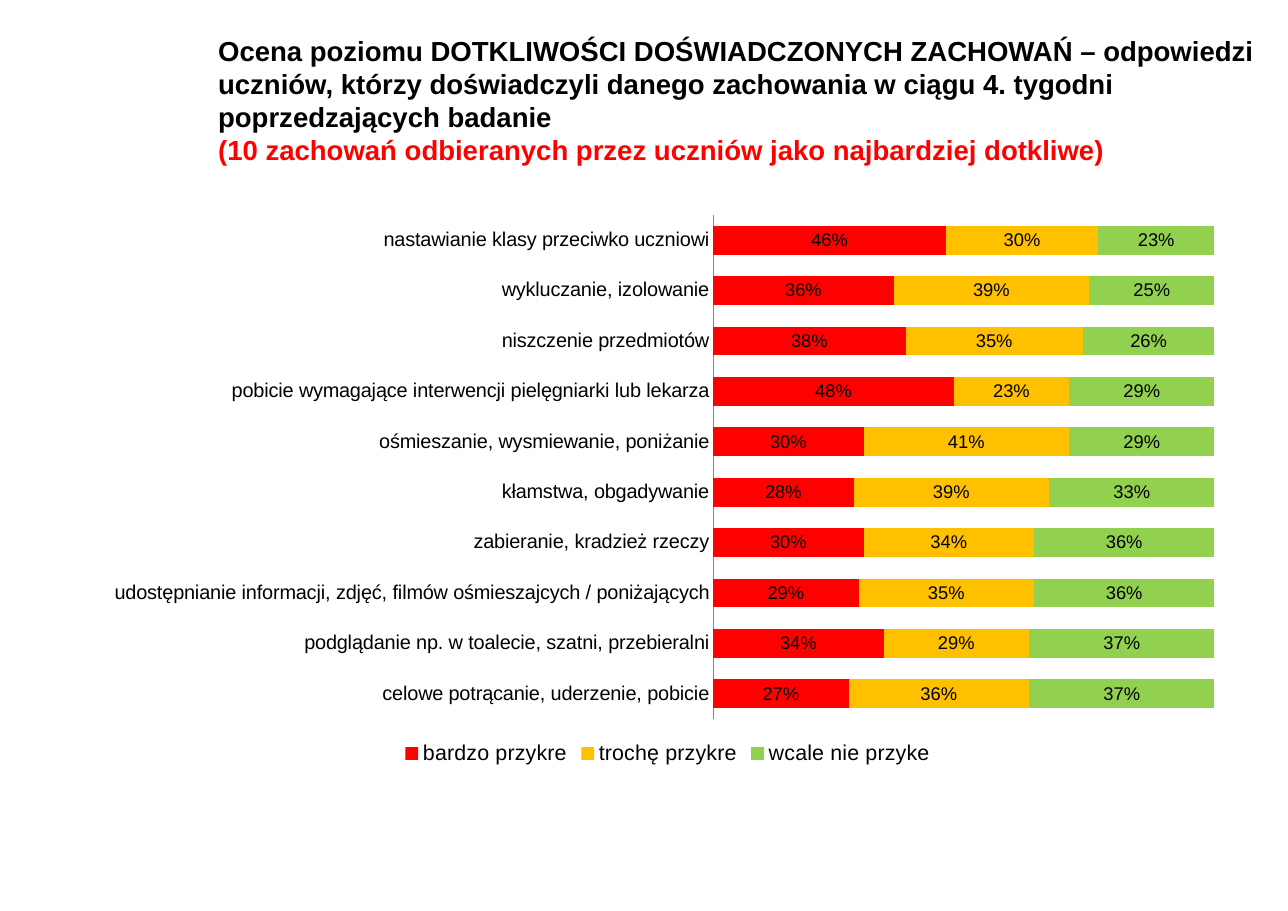
"""Builds the slide on how hurtful pupils find the behaviours they experienced."""
import pptx
import pptx.chart.data
import pptx.dml.color
import pptx.enum.chart
import pptx.enum.text
import pptx.oxml
import pptx.util
from pptx.util import Inches, Pt

COLORS = {"text": "000000", "accent": "FF0000", "axis": "868686"}
FONT = "Arial"
PERCENT = "###0%"
WIDTH, HEIGHT = 11.69, 8.27

HEADING = [
    ("Ocena poziomu DOTKLIWOŚCI DOŚWIADCZONYCH ZACHOWAŃ – odpowiedzi uczniów, "
     "którzy doświadczyli danego zachowania w ciągu 4. tygodni poprzedzających badanie", "text"),
    ("(10 zachowań odbieranych przez uczniów jako najbardziej dotkliwe)", "accent"),
]
RATINGS = [("bardzo przykre", "FF0000"), ("trochę przykre", "FFC000"), ("wcale nie przyke", "92D050")]
BEHAVIOURS = [
    ("nastawianie klasy przeciwko uczniowi", 0.46, 0.30, 0.23),
    ("wykluczanie, izolowanie", 0.36, 0.39, 0.25),
    ("niszczenie przedmiotów", 0.38, 0.35, 0.26),
    ("pobicie wymagające interwencji pielęgniarki lub lekarza", 0.48, 0.23, 0.29),
    ("ośmieszanie, wysmiewanie, poniżanie", 0.30, 0.41, 0.29),
    ("kłamstwa, obgadywanie", 0.28, 0.39, 0.33),
    ("zabieranie, kradzież rzeczy", 0.30, 0.34, 0.36),
    ("udostępnianie informacji, zdjęć, filmów ośmieszajcych / poniżających", 0.29, 0.35, 0.36),
    ("podglądanie np. w toalecie, szatni, przebieralni", 0.34, 0.29, 0.37),
    ("celowe potrącanie, uderzenie, pobicie", 0.27, 0.36, 0.37),
]
PLOT_SHARE = {"x": 0.54, "y": 0.02, "w": 0.44, "h": 0.89}


def rgb(value):
    return pptx.dml.color.RGBColor.from_string(value)


def style(font, size, color=COLORS["text"], bold=False):
    font.name, font.size, font.bold = FONT, Pt(size), bold
    font.color.rgb = rgb(color)


def add_heading(slide):
    left = 1.98
    frame = slide.shapes.add_textbox(Inches(left), 0, Inches(WIDTH - left), Inches(1.44)).text_frame
    frame.word_wrap = True
    frame.vertical_anchor = pptx.enum.text.MSO_ANCHOR.TOP
    frame.margin_left = frame.margin_right = frame.margin_bottom = 0
    frame.margin_top = Inches(0.31)
    paragraph = frame.paragraphs[0]
    paragraph.line_spacing = Pt(21.6)
    for index, (wording, color) in enumerate(HEADING):
        if index:
            paragraph.add_line_break()
        run = paragraph.add_run()
        run.text = wording
        style(run.font, 18, COLORS[color], True)


def place_plot(chart):
    namespace = pptx.oxml.ns.nsdecls("c")
    shares = "".join(f'<c:{side} val="{share}"/>' for side, share in PLOT_SHARE.items())
    layout = pptx.oxml.parse_xml(
        f'<c:layout {namespace}><c:manualLayout><c:layoutTarget val="inner"/>'
        f'<c:xMode val="edge"/><c:yMode val="edge"/>{shares}</c:manualLayout></c:layout>')
    plot_area = chart._chartSpace.chart.plotArea
    for default in plot_area.findall(pptx.oxml.ns.qn("c:layout")):
        plot_area.remove(default)
    plot_area.insert(0, layout)


def add_ratings_chart(slide):
    names, *columns = zip(*BEHAVIOURS)
    ratings = pptx.chart.data.CategoryChartData(number_format=PERCENT)
    ratings.categories = names
    for (rating, _), shares in zip(RATINGS, columns):
        ratings.add_series(rating, shares)
    chart = slide.shapes.add_chart(
        pptx.enum.chart.XL_CHART_TYPE.BAR_STACKED_100,
        Inches(0.89), Inches(1.85), Inches(10.34), Inches(5.14), ratings).chart
    style(chart.font, 10)
    chart.has_title = False

    chart.has_legend = True
    chart.legend.position = pptx.enum.chart.XL_LEGEND_POSITION.BOTTOM
    chart.legend.include_in_layout = False
    style(chart.legend.font, 14)

    behaviours = chart.category_axis
    behaviours.reverse_order = True
    behaviours.major_tick_mark = pptx.enum.chart.XL_TICK_MARK.NONE
    behaviours.format.line.color.rgb = rgb(COLORS["axis"])
    behaviours.format.line.width = Pt(0.75)
    style(behaviours.tick_labels.font, 13)
    chart.value_axis.has_major_gridlines = False
    chart.value_axis.visible = False

    bars = chart.plots[0]
    bars.gap_width, bars.overlap, bars.vary_by_categories = 75, 100, False
    for series, (_, color) in zip(bars.series, RATINGS):
        series.format.fill.solid()
        series.format.fill.fore_color.rgb = rgb(color)
        labels = series.data_labels
        labels.show_value = True
        labels.number_format, labels.number_format_is_linked = PERCENT, False
        style(labels.font, 12)
    place_plot(chart)


def main():
    deck = pptx.Presentation()
    deck.slide_width, deck.slide_height = Inches(WIDTH), Inches(HEIGHT)
    slide = deck.slides.add_slide(deck.slide_layouts[6])
    add_heading(slide)
    add_ratings_chart(slide)
    deck.save("out.pptx")


if __name__ == "__main__":
    main()
